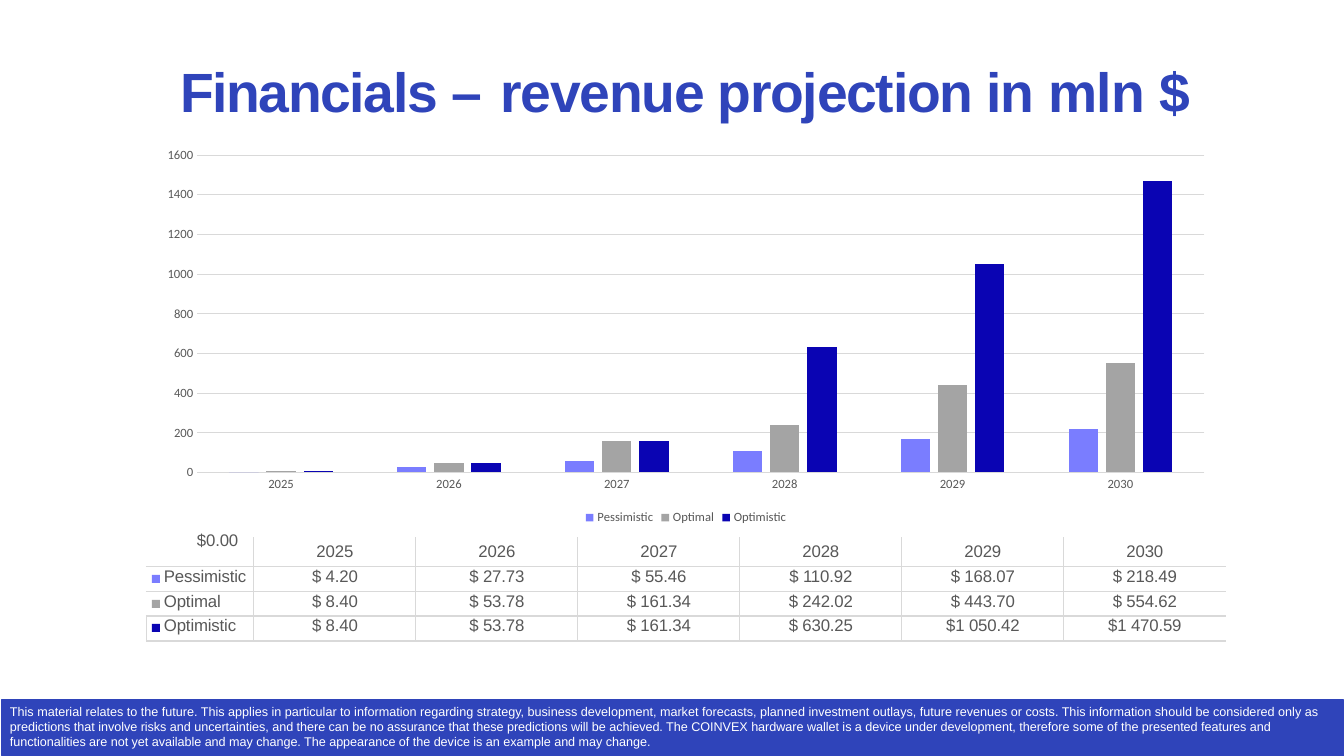
from lxml.etree import SubElement
from pptx import Presentation
from pptx.chart.data import CategoryChartData
from pptx.dml.color import RGBColor
from pptx.enum.chart import XL_CHART_TYPE, XL_LEGEND_POSITION, XL_TICK_MARK
from pptx.enum.shapes import MSO_CONNECTOR, MSO_SHAPE
from pptx.enum.text import MSO_ANCHOR, MSO_AUTO_SIZE, PP_ALIGN
from pptx.oxml.ns import qn
from pptx.util import Pt

SLIDE_W, SLIDE_H = 1344, 756
EMU_PER_PX = 12192000 / SLIDE_W

BLUE = RGBColor(0x2F, 0x44, 0xBA)
WHITE = RGBColor(0xFF, 0xFF, 0xFF)
RULE_GREY = RGBColor(0xD9, 0xD9, 0xD9)
TEXT_GREY = RGBColor(0x58, 0x58, 0x58)
PERIWINKLE = RGBColor(0x7A, 0x7D, 0xFF)
SILVER = RGBColor(0xA4, 0xA4, 0xA4)
NAVY = RGBColor(0x0A, 0x04, 0xB3)

YEARS = ["2025", "2026", "2027", "2028", "2029", "2030"]
SCENARIOS = [
    ("Pessimistic", PERIWINKLE, [4.20, 27.73, 55.46, 110.92, 168.07, 218.49]),
    ("Optimal", SILVER, [8.40, 53.78, 161.34, 242.02, 443.70, 554.62]),
    ("Optimistic", NAVY, [8.40, 53.78, 161.34, 630.25, 1050.42, 1470.59]),
]
TITLE_RUNS = [
    ("Financials ", -1), ("– ", 1), ("revenue projection ", -0.9),
    ("in ", -0.9), ("mln ", -0.6), ("$", 0.1),
]
DISCLAIMER_RUNS = [
    ("This material relates to the future. This applies in particular to information "
     "regarding strategy, business development, market forecasts, planned investment "
     "outlays, future revenues or costs. This information should be considered only as ", 0),
    ("predictions that involve risks and uncertainties, and there can be no assurance "
     "that these predictions will be achieved. The COINVEX hardware wallet is a device "
     "under development, therefore some of the presented features and functionalities "
     "are not yet available and may change. The appearance of the device is an example "
     "and may change.", -0.04),
]


def px(length):
    return round(length * EMU_PER_PX)


def add_text(paragraph, text, size, color, bold=False, tracking=0,
             align=PP_ALIGN.LEFT, before=0, line=None):
    paragraph.alignment = align
    paragraph.space_before = Pt(before)
    if line:
        paragraph.line_spacing = line
    run = paragraph.add_run()
    run.text = text
    run.font.name = "Arial"
    run.font.size = Pt(size)
    run.font.bold = bold
    run.font.color.rgb = color
    run._r.get_or_add_rPr().set("spc", str(round(tracking * 100)))


def set_margins(holder, left=0, top=0, right=0, bottom=0):
    holder.margin_left, holder.margin_top = px(left), px(top)
    holder.margin_right, holder.margin_bottom = px(right), px(bottom)


def add_block(slide, x, y, w, h, color):
    block = slide.shapes.add_shape(MSO_SHAPE.RECTANGLE, px(x), px(y), px(w), px(h))
    block.shadow.inherit = False
    block.fill.solid()
    block.fill.fore_color.rgb = color
    block.line.fill.background()
    return block


def add_rule(slide, x, y, w):
    rule = slide.shapes.add_connector(
        MSO_CONNECTOR.STRAIGHT, px(x), px(y), px(x + w), px(y))
    rule.line.color.rgb = RULE_GREY
    rule.line.width = Pt(0.75)
    SubElement(rule._element.spPr, qn("a:effectLst"))


def set_borders(cell, ruled_sides):
    tc_pr = cell._tc.get_or_add_tcPr()
    for position, side in enumerate("LRTB"):
        border = SubElement(tc_pr, qn(f"a:ln{side}"), w=str(Pt(0.75)))
        if side in ruled_sides:
            fill = SubElement(border, qn("a:solidFill"))
            SubElement(fill, qn("a:srgbClr"), val=str(RULE_GREY))
        else:
            SubElement(border, qn("a:noFill"))
        tc_pr.insert(position, border)


def build_title(slide, x, y, w, h):
    title = slide.shapes.title
    title.left, title.top, title.width, title.height = px(x), px(y), px(w), px(h)
    frame = title.text_frame
    frame.word_wrap = True
    frame.auto_size = MSO_AUTO_SIZE.NONE
    frame.vertical_anchor = MSO_ANCHOR.TOP
    set_margins(frame, left=86, top=48)
    for text, tracking in TITLE_RUNS:
        add_text(frame.paragraphs[0], text, 39.5, BLUE, bold=True,
                 tracking=tracking, before=1.3)


def format_chart_font(font, size):
    font.name = "Calibri"
    font.size = Pt(size)
    font.color.rgb = TEXT_GREY


def build_revenue_chart(slide, x, y, w, h):
    revenue = CategoryChartData(number_format="General")
    revenue.categories = YEARS
    for name, _, values in SCENARIOS:
        revenue.add_series(name, [round(value / 10) * 10 for value in values])
    chart = slide.shapes.add_chart(
        XL_CHART_TYPE.COLUMN_CLUSTERED, px(x), px(y), px(w), px(h), revenue).chart
    chart.has_title = False
    format_chart_font(chart.font, 10)
    chart.has_legend = True
    chart.legend.position = XL_LEGEND_POSITION.BOTTOM
    chart.legend.include_in_layout = False
    format_chart_font(chart.legend.font, 9)

    columns = chart.plots[0]
    columns.vary_by_categories = False
    columns.gap_width, columns.overlap = 219, -27
    for series, (_, color, _) in zip(columns.series, SCENARIOS):
        series.format.fill.solid()
        series.format.fill.fore_color.rgb = color

    years, amounts = chart.category_axis, chart.value_axis
    for axis in (years, amounts):
        axis.major_tick_mark = axis.minor_tick_mark = XL_TICK_MARK.NONE
        format_chart_font(axis.tick_labels.font, 9)
    amounts.minimum_scale, amounts.maximum_scale, amounts.major_unit = 0, 1600, 200
    amounts.format.line.fill.background()
    for line in (years.format.line, amounts.major_gridlines.format.line):
        line.color.rgb = RULE_GREY
        line.width = Pt(0.75)


def dollars(value):
    amount = f"{value:,.2f}".replace(",", " ")
    return f"${amount}" if value >= 1000 else f"$ {amount}"


def build_revenue_table(slide, x, y, w):
    widths = [6, 8, 94] + [162] * 5 + [122]
    heights = [30, 25, 24, 25]
    label, last = 2, len(widths) - 1
    rows = [["", "", "$0.00"] + YEARS]
    rows += [["", "", name] + [dollars(v) for v in values] for name, _, values in SCENARIOS]
    row_tops = [y + sum(heights[:r]) for r in range(1, len(heights) + 1)]
    for rule_y in row_tops:
        add_rule(slide, x, rule_y, w)

    table = slide.shapes.add_table(len(rows), len(widths), px(x), px(y),
                                   px(sum(widths)), px(sum(heights))).table
    table.first_row = table.horz_banding = False
    for column, width in zip(table.columns, widths):
        column.width = px(width)
    for r, texts in enumerate(rows):
        table.rows[r].height = px(heights[r])
        for c, text in enumerate(texts):
            cell = table.cell(r, c)
            cell.fill.background()
            cell.vertical_anchor = MSO_ANCHOR.TOP
            paragraph = cell.text_frame.paragraphs[0]
            if c < label:
                set_margins(cell)
                SubElement(paragraph._p, qn("a:endParaRPr"), sz="1000")
                set_borders(cell, "L" if c == 0 and r == len(rows) - 1 else "")
                continue
            corner = r == 0 and c == label
            indent = {label: 37 if corner else 4, last: 40}.get(c, 0)
            set_margins(cell, left=indent, top=0 if r or corner else 5)
            add_text(paragraph, text, 12, TEXT_GREY, tracking=-0.1,
                     align=PP_ALIGN.LEFT if c == label else PP_ALIGN.CENTER,
                     before=0 if corner else 0.6,
                     line=Pt(9.6) if corner else None)
            set_borders(cell, "R" if c == label else "L" if c == last else "LR")
    table.cell(0, 0).merge(table.cell(2, 1))
    for top, (_, color, _) in zip(row_tops, SCENARIOS):
        add_block(slide, x + 6, top + 8, 8, 8, color)


def build_disclaimer(slide, x, y, w, h):
    band = add_block(slide, x, y, w, h, BLUE)
    band.line.color.rgb = BLUE
    band.line.width = Pt(0.75)
    frame = band.text_frame
    frame.word_wrap = True
    frame.vertical_anchor = MSO_ANCHOR.TOP
    set_margins(frame, left=8, top=4, right=12)
    for text, tracking in DISCLAIMER_RUNS:
        add_text(frame.paragraphs[0], text, 9, WHITE, tracking=tracking,
                 before=0.2, line=1.0)


def main():
    deck = Presentation()
    deck.slide_width, deck.slide_height = px(SLIDE_W), px(SLIDE_H)
    slide = deck.slides.add_slide(deck.slide_layouts[5])
    build_title(slide, 94, 9, 1156, 116)
    build_revenue_chart(slide, 146, 140, 1080, 389)
    build_revenue_table(slide, 146, 537, 1080)
    build_disclaimer(slide, 2, 700, 1342, 56)
    deck.save("out.pptx")


if __name__ == "__main__":
    main()
